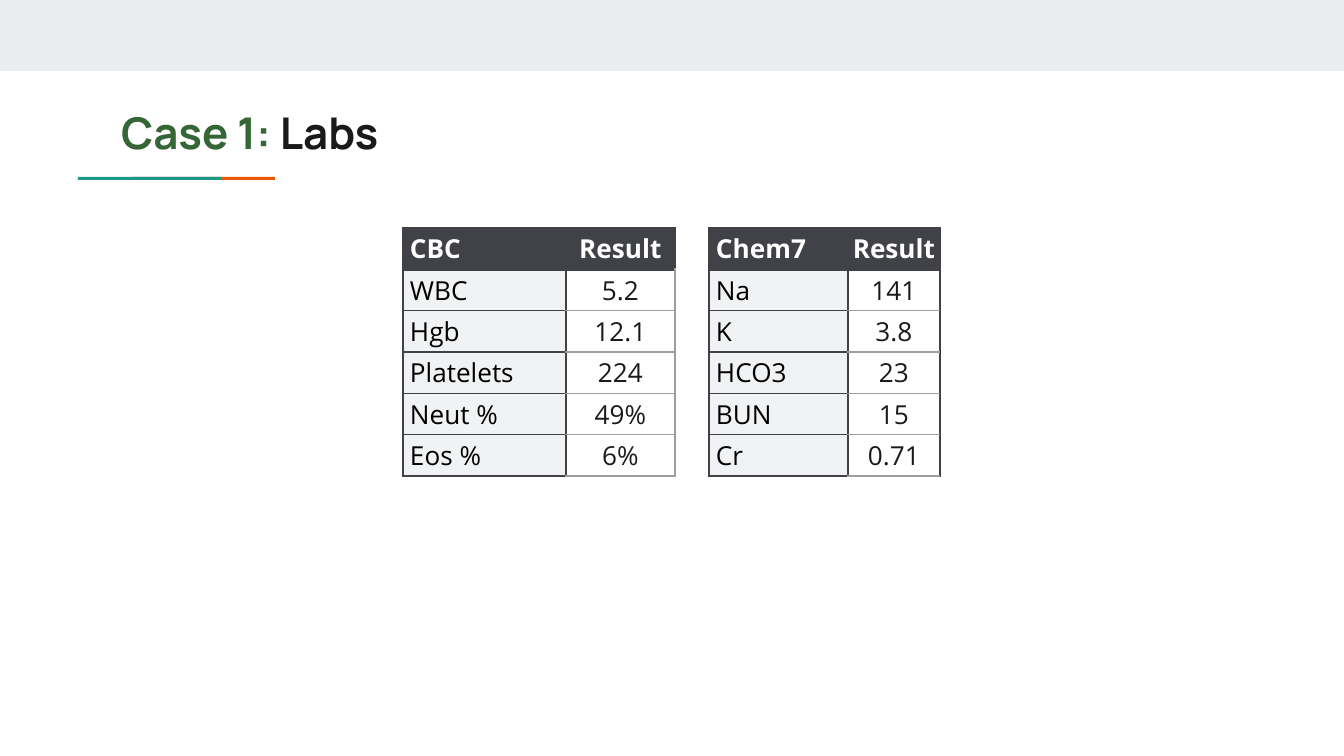
from dataclasses import dataclass

from lxml.etree import SubElement
from pptx import Presentation
from pptx.dml.color import RGBColor
from pptx.enum.shapes import MSO_SHAPE as Shape
from pptx.enum.text import MSO_ANCHOR as Anchor, MSO_AUTO_SIZE as Fit, PP_ALIGN as Align
from pptx.oxml.ns import qn
from pptx.util import Emu, Pt

SCALE = 914400 / 134.4
DARK, GREY, PALE, INK = "404247", "9E9E9E", "F1F2F3", "1A1A1A"


@dataclass
class Bar:
    left: int
    top: int
    width: int
    height: int
    color: str


@dataclass
class Panel:
    left: int
    cols: tuple[int, int]
    edge: str  # right border of the result cells
    rows: list[tuple[str, str]]


BARS = [
    Bar(0, 0, 1344, 71, "E9EDEE"),
    Bar(133, 177, 142, 3, "EB5600"),
    Bar(78, 177, 143, 3, "1A9988"),
]
PANELS = [
    Panel(403, (163, 109), GREY, [
        ("CBC", "Result"), ("WBC", "5.2"), ("Hgb", "12.1"),
        ("Platelets", "224"), ("Neut %", "49%"), ("Eos %", "6%")]),
    Panel(709, (139, 92), DARK, [
        ("Chem7", "Result"), ("Na", "141"), ("K", "3.8"),
        ("HCO3", "23"), ("BUN", "15"), ("Cr", "0.71")]),
]
TOP, TALL = 228, 248


def px(n: float) -> Emu:
    return Emu(round(n * SCALE))


def rgb(code: str) -> RGBColor:
    return RGBColor.from_string(code)


def add_run(para, text: str, font: str, size: float, color: str, bold: bool) -> None:
    run = para.add_run()
    run.text = text
    run.font.name, run.font.size, run.font.bold = font, Pt(size), bold
    run.font.color.rgb = rgb(color)


def draw_bar(slide, bar: Bar) -> None:
    box = slide.shapes.add_shape(
        Shape.RECTANGLE, px(bar.left), px(bar.top), px(bar.width), px(bar.height))
    box.shadow.inherit = False
    box.fill.solid()
    box.fill.fore_color.rgb = rgb(bar.color)
    box.line.fill.background()


def set_edges(cell, edges: dict[str, tuple[str, float]]) -> None:
    """Give the cell borders, keyed L, R, T, B in schema order, ahead of its fill."""
    props = cell._tc.get_or_add_tcPr()
    for spot, (side, (color, width)) in enumerate(edges.items()):
        line = SubElement(props, qn(f"a:ln{side}"), w=str(Pt(width)))
        fill = SubElement(line, qn("a:solidFill"))
        SubElement(fill, qn("a:srgbClr"), val=color)
        props.insert(spot, line)


def fill_cell(cell, text: str, row: int, col: int, edge: str) -> None:
    head, label = row == 0, col == 0
    cell.vertical_anchor = Anchor.MIDDLE
    cell.margin_left = px(7 if label else 0)
    cell.margin_right = cell.margin_top = cell.margin_bottom = 0
    if head or label:
        cell.fill.solid()
        cell.fill.fore_color.rgb = rgb(DARK if head else PALE)
    else:
        cell.fill.background()
    para = cell.text_frame.paragraphs[0]
    para.alignment = Align.LEFT if label else Align.CENTER
    color = "FFFFFF" if head else "000000" if label else INK
    add_run(para, text, "Open Sans", 14, color, head)
    rule = DARK if head or label else GREY
    set_edges(cell, {
        "L": (DARK, 0.75),
        "R": (DARK if head or label else edge, 0.75),
        "T": (DARK, 1.5) if row == 1 else (rule, 0.75),
        "B": (rule, 1.5 if head else 0.75),
    })


def draw_panel(slide, panel: Panel) -> None:
    count = len(panel.rows)
    table = slide.shapes.add_table(
        count, 2, px(panel.left), px(TOP), px(sum(panel.cols)), px(TALL)).table
    table.first_row = table.horz_banding = False
    for col, width in enumerate(panel.cols):
        table.columns[col].width = px(width)
    for row, texts in enumerate(panel.rows):
        table.rows[row].height = px(TALL / count)
        for col, text in enumerate(texts):
            fill_cell(table.cell(row, col), text, row, col, panel.edge)


def set_title(slide) -> None:
    title = slide.shapes.title
    title.left, title.top, title.width, title.height = px(108), px(93), px(1130), px(79)
    frame = title.text_frame
    frame.auto_size, frame.word_wrap = Fit.NONE, True
    frame.vertical_anchor = Anchor.TOP
    frame.margin_left = frame.margin_right = px(13)
    frame.margin_top = frame.margin_bottom = px(13)
    para = frame.paragraphs[0]
    para.alignment = Align.LEFT
    add_run(para, "Case 1:", "Manrope", 23.4, "356635", True)
    add_run(para, " Labs", "Manrope", 23.4, INK, True)


def main() -> None:
    deck = Presentation()
    deck.slide_width, deck.slide_height = px(1344), px(756)
    slide = deck.slides.add_slide(deck.slide_layouts[5])
    for bar in BARS:
        draw_bar(slide, bar)
    set_title(slide)
    for panel in PANELS:
        draw_panel(slide, panel)
    deck.save("out.pptx")


if __name__ == "__main__":
    main()
